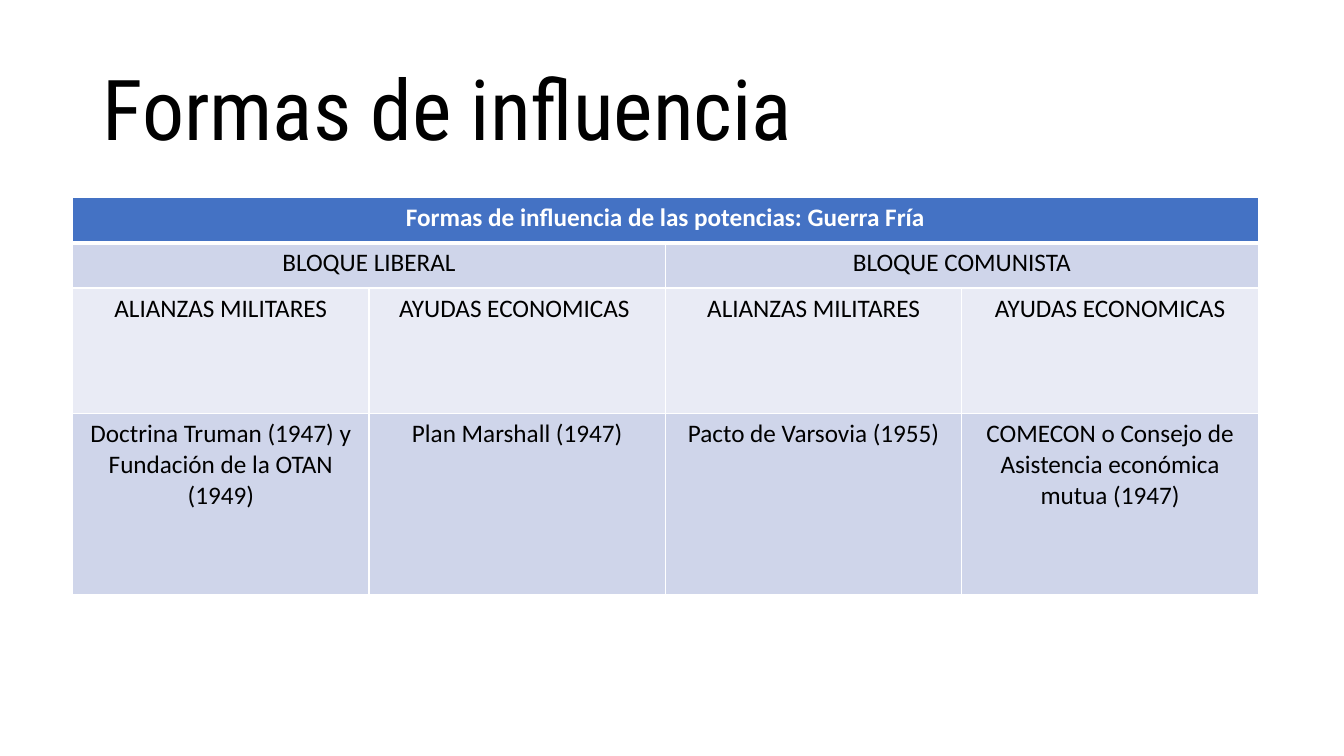
from lxml.etree import SubElement
from pptx import Presentation
from pptx.dml.color import RGBColor
from pptx.enum.text import MSO_ANCHOR, PP_ALIGN
from pptx.oxml.ns import qn
from pptx.util import Cm, Pt

# Content: each row lists (text, columns spanned)
TITLE = "Formas de influencia"
ROWS = [
    [("Formas de influencia de las potencias: Guerra Fría", 4)],
    [("BLOQUE LIBERAL", 2), ("BLOQUE COMUNISTA", 2)],
    [("ALIANZAS MILITARES", 1), ("AYUDAS ECONOMICAS ", 1),
     ("ALIANZAS MILITARES", 1), ("AYUDAS ECONOMICAS", 1)],
    [("Doctrina Truman (1947) y Fundación de la OTAN (1949)", 1),
     ("Plan Marshall (1947)", 1),
     ("Pacto de Varsovia (1955)", 1),
     ("COMECON o Consejo de Asistencia económica mutua (1947)", 1)],
]

# Look
WHITE = RGBColor(0xFF, 0xFF, 0xFF)
BLACK = RGBColor(0, 0, 0)
HEADER_BLUE = RGBColor(0x44, 0x72, 0xC4)
BAND_DARK = RGBColor(0xCF, 0xD5, 0xEA)
BAND_LIGHT = RGBColor(0xE9, 0xEB, 0xF5)
ROW_FILLS = [HEADER_BLUE, BAND_DARK, BAND_LIGHT, BAND_DARK]
ROW_HEIGHTS = [Cm(1.14), Cm(1.14), Cm(3.16), Cm(4.56)]
COLUMNS = 4
COLUMN_WIDTH = Cm(7.47)
TITLE_FONT = {"name": "Roboto Condensed", "size": Pt(60), "bold": False}
HEADER_FONT = {"name": "Calibri", "size": Pt(18), "bold": True}
BODY_FONT = {**HEADER_FONT, "bold": False}


def apply_font(font, values, color):
    for key, value in values.items():
        setattr(font, key, value)
    font.color.rgb = color


def add_borders(cell, widths):
    """Draw white cell borders; widths maps an edge tag to its width."""
    properties = cell._tc.get_or_add_tcPr()
    for edge, width in widths.items():
        line = SubElement(properties, qn(f"a:{edge}"), w=str(width))
        fill = SubElement(line, qn("a:solidFill"))
        SubElement(fill, qn("a:srgbClr"), val=str(WHITE))


presentation = Presentation()
presentation.slide_width, presentation.slide_height = Cm(33.87), Cm(19.05)
slide = presentation.slides.add_slide(presentation.slide_layouts[5])

# Title
heading = slide.shapes.title
heading.left, heading.top = Cm(2.33), Cm(1.01)
heading.width, heading.height = Cm(29.21), Cm(3.68)
heading.text_frame.text = TITLE
heading.text_frame.word_wrap = True
heading.text_frame.vertical_anchor = MSO_ANCHOR.MIDDLE
heading_line = heading.text_frame.paragraphs[0]
heading_line.alignment = PP_ALIGN.LEFT
heading_line.line_spacing = 0.9
apply_font(heading_line.runs[0].font, TITLE_FONT, BLACK)

# Table of influence by bloc
influence = slide.shapes.add_table(
    len(ROWS), COLUMNS, Cm(1.83), Cm(4.98),
    COLUMN_WIDTH * COLUMNS, sum(ROW_HEIGHTS)).table
for column in influence.columns:
    column.width = COLUMN_WIDTH

for r, (entries, fill, height) in enumerate(zip(ROWS, ROW_FILLS, ROW_HEIGHTS)):
    influence.rows[r].height = height
    is_header = r == 0

    # Fill and borders, thicker under the header
    borders = {"lnL": Pt(1), "lnR": Pt(1),
               "lnT": Pt(3 if r == 1 else 1),
               "lnB": Pt(3 if is_header else 1)}
    for c in range(COLUMNS):
        cell = influence.cell(r, c)
        add_borders(cell, borders)
        cell.fill.solid()
        cell.fill.fore_color.rgb = fill

    # Text, merged across the spanned columns
    c = 0
    for text, span in entries:
        cell = influence.cell(r, c)
        if span > 1:
            cell.merge(influence.cell(r, c + span - 1))
        cell.text = text
        paragraph = cell.text_frame.paragraphs[0]
        paragraph.alignment = PP_ALIGN.CENTER
        apply_font(paragraph.runs[0].font,
                   HEADER_FONT if is_header else BODY_FONT,
                   WHITE if is_header else BLACK)
        c += span

presentation.save("out.pptx")
